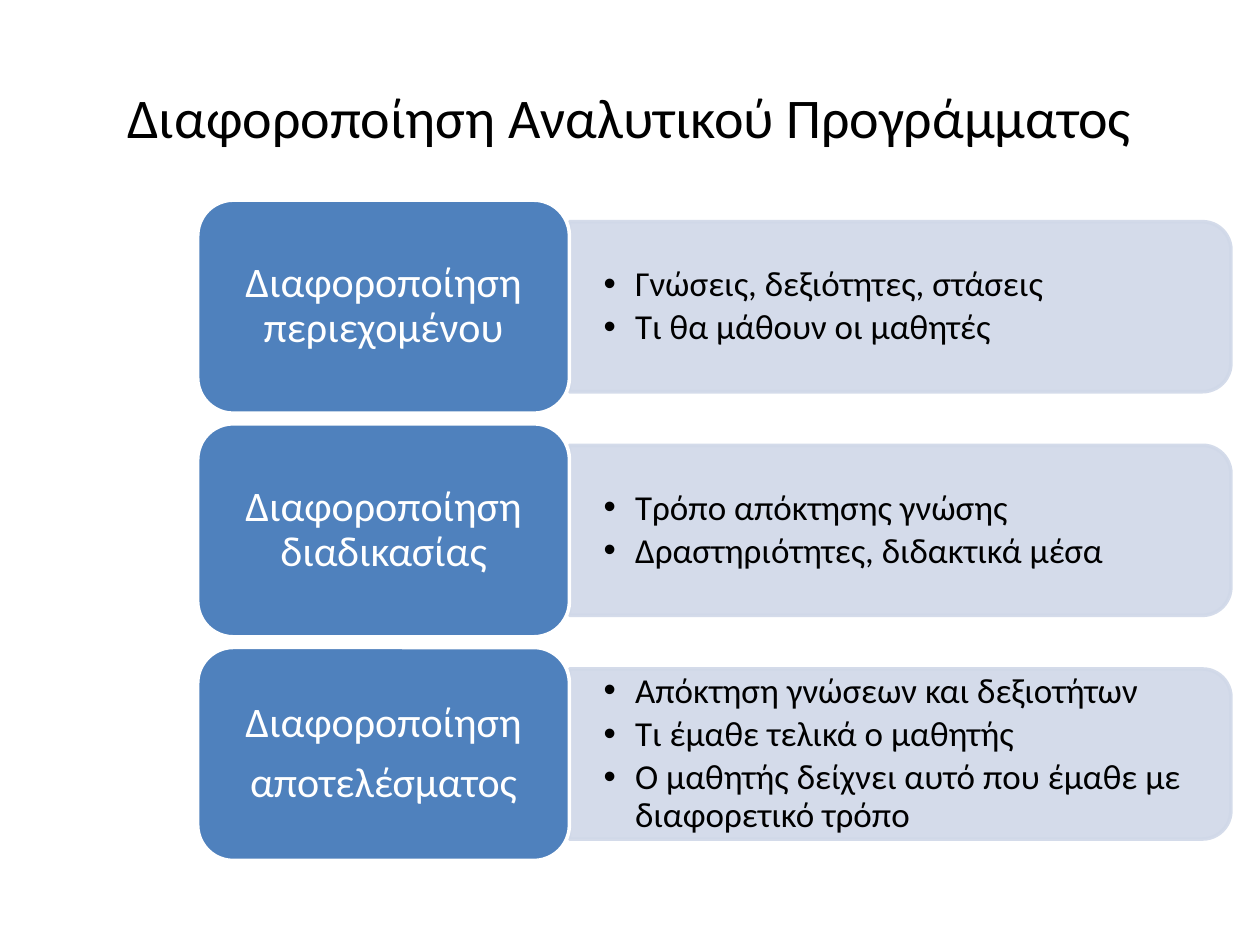
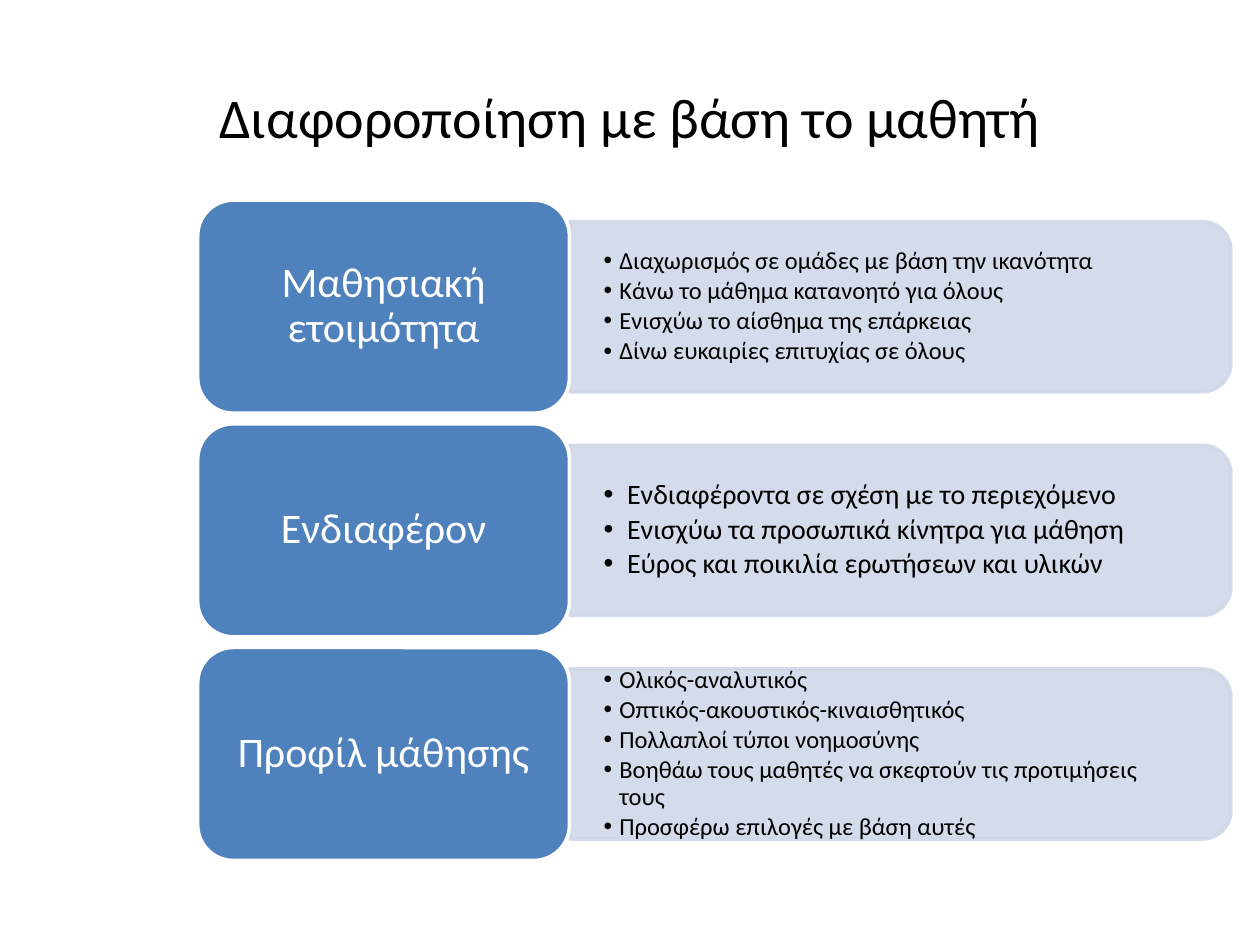
from lxml import etree
from pptx import Presentation
from pptx.dml.color import RGBColor
from pptx.enum.shapes import MSO_SHAPE
from pptx.enum.text import MSO_ANCHOR, PP_ALIGN
from pptx.oxml.ns import qn
from pptx.util import Pt

CENTER, LEFT = PP_ALIGN.CENTER, PP_ALIGN.LEFT
MIDDLE = MSO_ANCHOR.MIDDLE
CARD_SHAPE = MSO_SHAPE.ROUNDED_RECTANGLE
PANEL_SHAPE = MSO_SHAPE.ROUND_2_SAME_RECTANGLE

COLORS = {"card": "4F81BD", "panel": "D0D8E8", "light": "FFFFFF", "dark": "000000"}
FONT = "Calibri"

CARD_LEFT, CARD_TOP, CARD_WIDTH, CARD_HEIGHT = 113, 114.4, 212.4, 121.7
ROW_STEP = 127.8
PANEL_LEFT, PANEL_WIDTH, PANEL_HEIGHT = CARD_LEFT + CARD_WIDTH, 378, 97.2
POINTS_WIDTH, POINTS_HEIGHT = 373, 87.8

# Each row: heading paragraphs, text size of the points, their indent, the points
SLIDES = [
    ("Διαφοροποίηση Αναλυτικού Προγράμματος", [
        (["Διαφοροποίηση περιεχομένου"], 20, 18,
         ["Γνώσεις, δεξιότητες, στάσεις", "Τι θα μάθουν οι μαθητές"]),
        (["Διαφοροποίηση διαδικασίας"], 20, 18,
         ["Τρόπο απόκτησης γνώσης", "Δραστηριότητες, διδακτικά μέσα"]),
        (["Διαφοροποίηση", "αποτελέσματος"], 20, 18,
         ["Απόκτηση γνώσεων και δεξιοτήτων", "Τι έμαθε τελικά ο μαθητής",
          "Ο μαθητής δείχνει αυτό που έμαθε με διαφορετικό τρόπο"]),
    ]),
    ("Διαφοροποίηση με βάση το μαθητή", [
        (["Μαθησιακή ετοιμότητα"], 14, 9,
         ["Διαχωρισμός σε ομάδες με βάση την ικανότητα",
          "Κάνω το μάθημα κατανοητό για όλους",
          "Ενισχύω το αίσθημα της επάρκειας",
          "Δίνω ευκαιρίες επιτυχίας σε όλους"]),
        (["Ενδιαφέρον"], 16, 13.5,
         ["Ενδιαφέροντα σε σχέση με το περιεχόμενο",
          "Ενισχύω τα προσωπικά κίνητρα για μάθηση",
          "Εύρος και ποικιλία ερωτήσεων και υλικών"]),
        (["Προφίλ μάθησης"], 14, 9,
         ["Ολικός-αναλυτικός", "Οπτικός-ακουστικός-κιναισθητικός",
          "Πολλαπλοί τύποι νοημοσύνης",
          "Βοηθάω τους μαθητές να σκεφτούν τις προτιμήσεις τους",
          "Προσφέρω επιλογές με βάση αυτές"]),
    ]),
]


def write(shape, paragraphs, size, color, align=CENTER, line_spacing=1.0,
          space_after=0, indent=0, margins=(7.2, 3.6)):
    """Fill a shape with paragraphs; a non-zero indent makes them bulleted."""
    frame = shape.text_frame
    frame.word_wrap = True
    frame.vertical_anchor = MIDDLE
    frame.margin_left = frame.margin_right = Pt(margins[0])
    frame.margin_top = frame.margin_bottom = Pt(margins[1])
    for number, text in enumerate(paragraphs):
        paragraph = frame.add_paragraph() if number else frame.paragraphs[0]
        paragraph.alignment = align
        paragraph.line_spacing = line_spacing
        paragraph.space_after = Pt(space_after)
        run = paragraph.add_run()
        run.text = text
        run.font.name = FONT
        run.font.size = Pt(size)
        run.font.color.rgb = RGBColor.from_string(COLORS[color])
        if indent:
            properties = paragraph._p.get_or_add_pPr()
            properties.set("marL", str(Pt(indent)))
            properties.set("indent", str(-Pt(indent)))
            etree.SubElement(properties, qn("a:buFont"), typeface="Arial")
            etree.SubElement(properties, qn("a:buChar"), char="•")


def add_block(slide, preset, left, top, width, height, fill, line, opacity=100):
    block = slide.shapes.add_shape(preset, Pt(left), Pt(top), Pt(width), Pt(height))
    block.shadow.inherit = False
    block.fill.solid()
    block.fill.fore_color.rgb = RGBColor.from_string(COLORS[fill])
    block.line.color.rgb = RGBColor.from_string(COLORS[line])
    block.line.width = Pt(2)
    if opacity < 100:
        for color in block._element.spPr.iter(qn("a:srgbClr")):
            etree.SubElement(color, qn("a:alpha"), val=str(opacity * 1000))
    return block


prs = Presentation()
prs.slide_width, prs.slide_height = Pt(720), Pt(540)

for title, rows in SLIDES:
    slide = prs.slides.add_slide(prs.slide_layouts[6])
    title_box = slide.shapes.add_textbox(Pt(36), Pt(21.6), Pt(648), Pt(90))
    write(title_box, [title], 32, "dark")

    for row, (heading, size, indent, points) in enumerate(rows):
        card_top = CARD_TOP + row * ROW_STEP
        middle = card_top + CARD_HEIGHT / 2

        # The panel is an upright shape turned a quarter, so its rounded end faces right
        panel = add_block(slide, PANEL_SHAPE,
                          PANEL_LEFT + (PANEL_WIDTH - PANEL_HEIGHT) / 2,
                          middle - PANEL_WIDTH / 2,
                          PANEL_HEIGHT, PANEL_WIDTH, "panel", "panel", opacity=90)
        panel.rotation = 90

        points_box = slide.shapes.add_textbox(
            Pt(PANEL_LEFT), Pt(middle - POINTS_HEIGHT / 2),
            Pt(POINTS_WIDTH), Pt(POINTS_HEIGHT))
        write(points_box, points, size, "dark", align=LEFT, line_spacing=0.9,
              space_after=size * 0.15, indent=indent, margins=(19.5, 10))

        card = add_block(slide, CARD_SHAPE, CARD_LEFT, card_top,
                         CARD_WIDTH, CARD_HEIGHT, "card", "light")
        write(card, heading, 24, "light", line_spacing=0.9, space_after=24 * 0.35)

prs.save("out.pptx")
